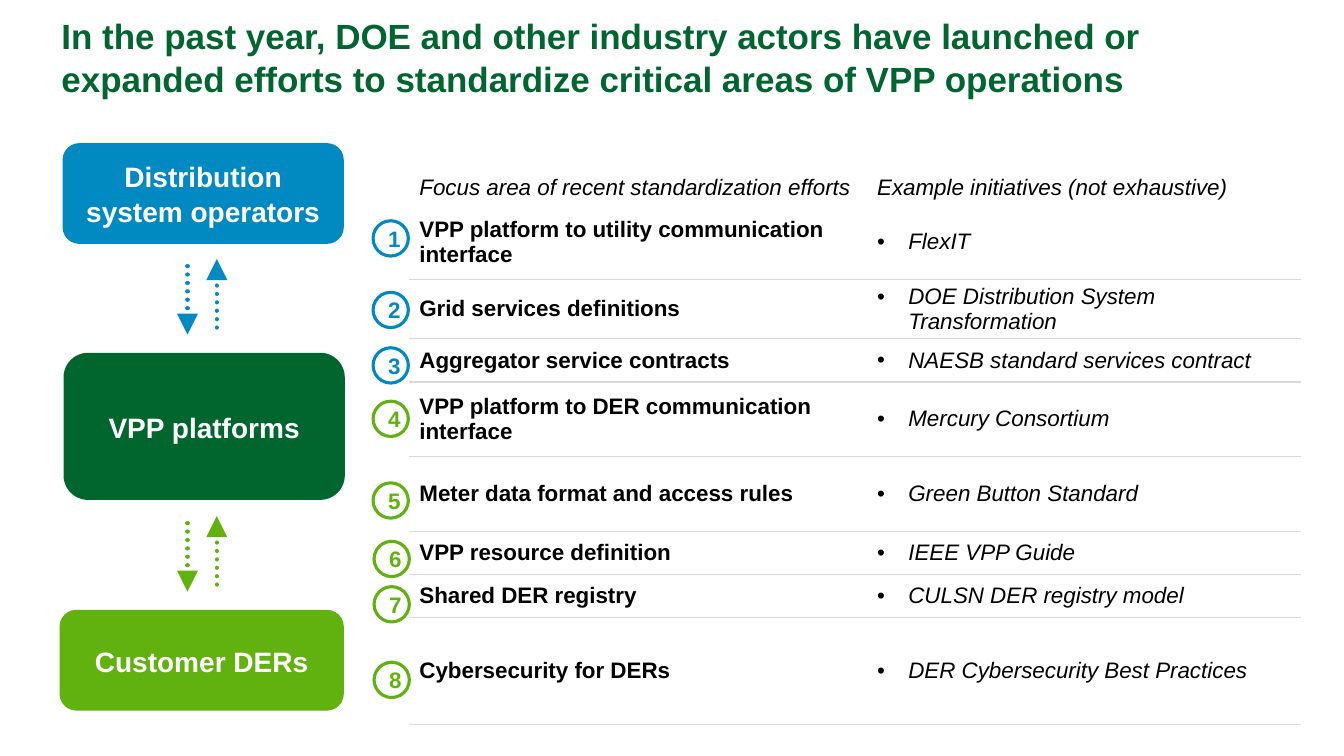
from dataclasses import dataclass

from lxml import etree
from pptx import Presentation
from pptx.dml.color import RGBColor
from pptx.enum.dml import MSO_LINE
from pptx.enum.shapes import MSO_CONNECTOR, MSO_SHAPE
from pptx.enum.text import MSO_ANCHOR, MSO_AUTO_SIZE, PP_ALIGN
from pptx.oxml.ns import qn
from pptx.util import Pt

ROUNDED, OVAL = MSO_SHAPE.ROUNDED_RECTANGLE, MSO_SHAPE.OVAL
STRAIGHT, DOTTED = MSO_CONNECTOR.STRAIGHT, MSO_LINE.ROUND_DOT
TOP, MIDDLE, BOTTOM = MSO_ANCHOR.TOP, MSO_ANCHOR.MIDDLE, MSO_ANCHOR.BOTTOM
LEFT, CENTER = PP_ALIGN.LEFT, PP_ALIGN.CENTER
NO_AUTOSIZE = MSO_AUTO_SIZE.NONE
TITLE_ONLY_LAYOUT = 5


@dataclass(frozen=True)
class Theme:
    font: str = "Arial"
    title: str = "00652E"
    blue: str = "008AC1"
    dark_green: str = "00662E"
    green: str = "62B20F"
    rule: str = "D9D9D9"
    white: str = "FFFFFF"
    black: str = "000000"
    title_size: int = 25
    box_size: int = 20
    table_size: int = 16
    line_spacing: float = 1.04


@dataclass(frozen=True)
class Actor:
    text: str
    left: int
    top: int
    width: int
    height: int
    color: str


@dataclass(frozen=True)
class Focus:
    area: str
    initiative: str
    row_height: int
    badge_left: int
    badge_top: int
    color: str


THEME = Theme()
ACTORS = [
    Actor("Distribution system operators", 62, 142, 279, 100, THEME.blue),
    Actor("VPP platforms", 63, 350, 279, 146, THEME.dark_green),
    Actor("Customer DERs", 59, 605, 282, 100, THEME.green),
]
HEADINGS = ("Focus area of recent standardization efforts", "Example initiatives (not exhaustive)")
FOCUSES = [
    Focus("VPP platform to utility communication interface", "FlexIT", 74, 370, 219, THEME.blue),
    Focus("Grid services definitions", "DOE Distribution System Transformation", 59, 370, 290, THEME.blue),
    Focus("Aggregator service contracts", "NAESB standard services contract", 43, 370, 345, THEME.blue),
    Focus("VPP platform to DER communication interface", "Mercury Consortium", 74, 370, 398, THEME.green),
    Focus("Meter data format and access rules", "Green Button Standard", 74, 370, 479, THEME.green),
    Focus("VPP resource definition", "IEEE VPP Guide", 43, 371, 537, THEME.green),
    Focus("Shared DER registry", "CULSN DER registry model", 43, 371, 582, THEME.green),
    Focus("Cybersecurity for DERs", "DER Cybersecurity Best Practices", 106, 371, 657, THEME.green),
]
HEADING_HEIGHT = 74
COLUMN_WIDTHS = (454, 430)
BADGE_SIZE = 35
BULLET_INDENT = 31


def px(length: int) -> int:
    """One px is a hundredth of an inch."""
    return length * 9144


def rgb(color: str) -> RGBColor:
    return RGBColor.from_string(color)


def style(para, size: int, color: str, bold=False, italic=False, align=LEFT) -> None:
    para.alignment = align
    font = para.font
    font.name, font.size = THEME.font, Pt(size)
    font.bold, font.italic = bold, italic
    font.color.rgb = rgb(color)


def add_title(page, text: str) -> None:
    title = page.shapes.title
    title.left, title.top, title.width, title.height = map(px, (61, 19, 1212, 80))
    frame = title.text_frame
    frame.text = text
    frame.word_wrap, frame.auto_size = True, NO_AUTOSIZE
    frame.vertical_anchor = BOTTOM
    frame.margin_left = frame.margin_right = frame.margin_top = frame.margin_bottom = 0
    para = frame.paragraphs[0]
    para.line_spacing = THEME.line_spacing
    style(para, THEME.title_size, THEME.title, bold=True)


def add_label(page, kind, bounds: tuple, text: str, fill: str, color: str, size: int):
    shape = page.shapes.add_shape(kind, *map(px, bounds))
    shape.shadow.inherit = False
    shape.fill.solid()
    shape.fill.fore_color.rgb = rgb(fill)
    shape.line.fill.background()
    frame = shape.text_frame
    frame.text = text
    frame.word_wrap, frame.vertical_anchor = True, MIDDLE
    para = frame.paragraphs[0]
    para.space_after = Pt(3)
    style(para, size, color, bold=True, align=CENTER)
    return shape


def add_actor(page, actor: Actor) -> None:
    bounds = (actor.left, actor.top, actor.width, actor.height)
    box = add_label(page, ROUNDED, bounds, actor.text, actor.color, THEME.white, THEME.box_size)
    box.text_frame.paragraphs[0].line_spacing = THEME.line_spacing


def add_badge(page, number: int, focus: Focus) -> None:
    bounds = (focus.badge_left, focus.badge_top, BADGE_SIZE, BADGE_SIZE)
    badge = add_label(page, OVAL, bounds, str(number), THEME.white, focus.color, THEME.table_size)
    badge.line.color.rgb = rgb(focus.color)
    badge.line.width = Pt(2.25)


def add_arrow(page, x: int, start: int, end: int, color: str) -> None:
    arrow = page.shapes.add_connector(STRAIGHT, px(x), px(start), px(x), px(end))
    arrow.line.color.rgb = rgb(color)
    arrow.line.width = Pt(3)
    arrow.line.dash_style = DOTTED
    properties = arrow.element.spPr
    line = properties.find(qn("a:ln"))
    line.set("cap", "rnd")
    etree.SubElement(line, qn("a:tailEnd"), type="triangle", w="lg", len="lg")
    etree.SubElement(properties, qn("a:effectLst"))


def add_exchange(page, top: int, color: str) -> None:
    add_arrow(page, 186, top + 7, top + 75, color)
    add_arrow(page, 215, top + 68, top, color)


def add_rule(cell, side: str) -> None:
    line = etree.SubElement(cell._tc.get_or_add_tcPr(), qn(f"a:{side}"), w=str(Pt(1)))
    fill = etree.SubElement(line, qn("a:solidFill"))
    etree.SubElement(fill, qn("a:srgbClr"), val=THEME.rule)


def fill_cell(cell, text: str, anchor, bold=False, bullet=False) -> None:
    cell.text = text
    cell.vertical_anchor = anchor
    cell.margin_top = cell.margin_bottom = px(4)
    cell.margin_left = cell.margin_right = px(10)
    para = cell.text_frame.paragraphs[0]
    if bullet:
        properties = para._p.get_or_add_pPr()
        properties.set("marL", str(px(BULLET_INDENT)))
        properties.set("indent", str(-px(BULLET_INDENT)))
        etree.SubElement(properties, qn("a:buFont"), typeface=THEME.font)
        etree.SubElement(properties, qn("a:buChar"), char="•")
    style(para, THEME.table_size, THEME.black, bold=bold, italic=not bold)


def add_focus_table(page) -> None:
    heights = [HEADING_HEIGHT] + [focus.row_height for focus in FOCUSES]
    bounds = (406, 129, sum(COLUMN_WIDTHS), sum(heights))
    table = page.shapes.add_table(len(heights), len(COLUMN_WIDTHS), *map(px, bounds)).table
    table.first_row = table.horz_banding = False
    for column, width in zip(table.columns, COLUMN_WIDTHS):
        column.width = px(width)
    for row, height in zip(table.rows, heights):
        row.height = px(height)
    for column, heading in enumerate(HEADINGS):
        fill_cell(table.cell(0, column), heading, BOTTOM)
    for index, focus in enumerate(FOCUSES, 1):
        fill_cell(table.cell(index, 0), focus.area, MIDDLE, bold=True)
        fill_cell(table.cell(index, 1), focus.initiative, MIDDLE, bullet=True)
        for cell in table.rows[index].cells:
            if index > 1:
                add_rule(cell, "lnT")
            add_rule(cell, "lnB")
    for cell in table.iter_cells():
        cell.fill.background()


def main() -> None:
    deck = Presentation()
    deck.slide_width, deck.slide_height = px(1333), px(750)
    page = deck.slides.add_slide(deck.slide_layouts[TITLE_ONLY_LAYOUT])
    add_title(page, "In the past year, DOE and other industry actors have launched or "
                    "expanded efforts to standardize critical areas of VPP operations")
    # Actors and the exchanges between them
    for actor in ACTORS:
        add_actor(page, actor)
    add_exchange(page, 257, THEME.blue)
    add_exchange(page, 512, THEME.green)
    # Focus areas with numbered badges
    add_focus_table(page)
    for number, focus in enumerate(FOCUSES, 1):
        add_badge(page, number, focus)
    deck.save("out.pptx")


if __name__ == "__main__":
    main()
